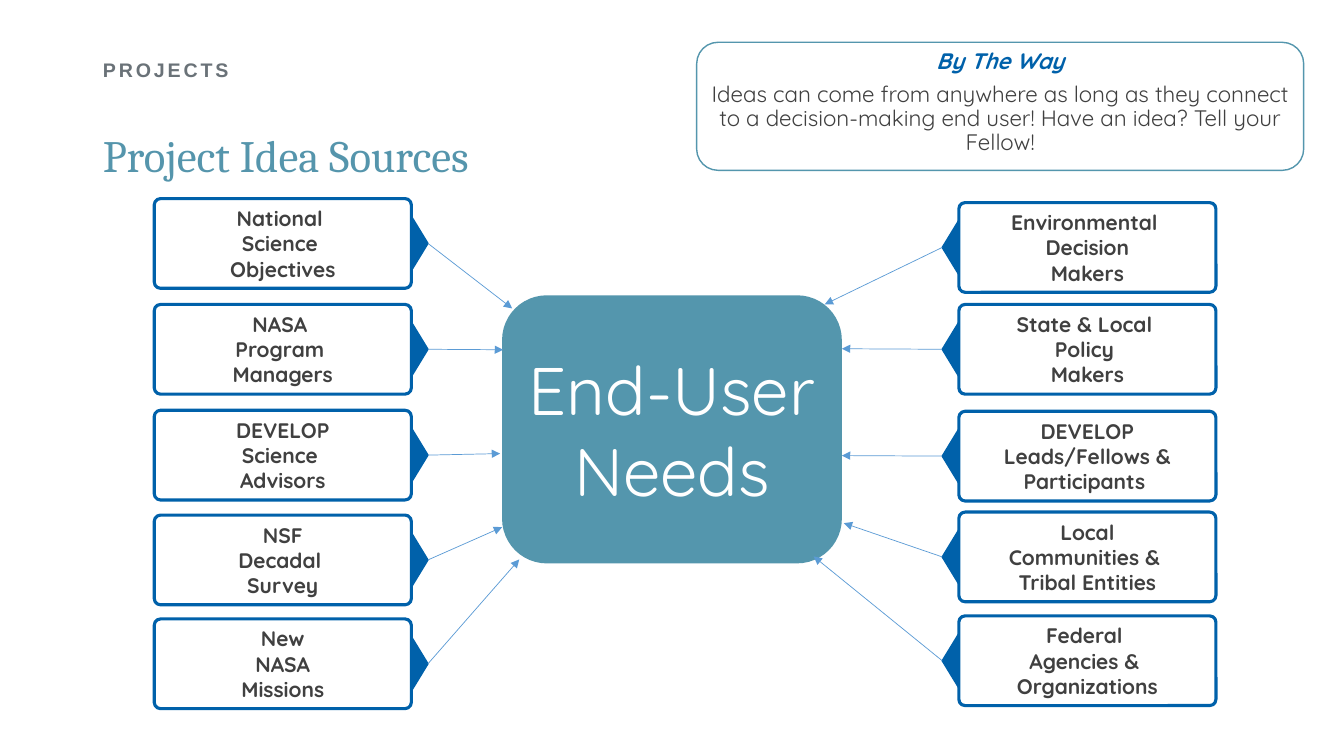
"""Build the slide on project idea sources that feed end-user needs."""
from lxml import etree
from pptx import Presentation
from pptx.dml.color import RGBColor
from pptx.enum.shapes import MSO_CONNECTOR, MSO_SHAPE
from pptx.enum.text import MSO_ANCHOR, MSO_AUTO_SIZE, PP_ALIGN
from pptx.oxml.ns import qn
from pptx.util import Inches, Pt

ROUNDED, TRIANGLE = MSO_SHAPE.ROUNDED_RECTANGLE, MSO_SHAPE.ISOSCELES_TRIANGLE
STRAIGHT = MSO_CONNECTOR.STRAIGHT
TOP, MIDDLE = MSO_ANCHOR.TOP, MSO_ANCHOR.MIDDLE
LEFT, CENTER = PP_ALIGN.LEFT, PP_ALIGN.CENTER
NO_FIT = MSO_AUTO_SIZE.NONE

TEAL, BLUE, ARROW_BLUE = "5496AD", "0061AA", "5B9BD5"
DARK, GRAY, WHITE = "404040", "6A7278", "FFFFFF"
FONT = "Quicksand"

SECTION = "PROJECTS"
HEADING = "Project Idea Sources"
HUB = "End-User Needs"
ASIDE_TITLE = "By The Way"
ASIDE = ("Ideas can come from anywhere as long as they connect to a "
         "decision-making end user! Have an idea? Tell your Fellow!")

# Each source: lines of its label, top of its box, point where its arrow ends.
LEFT_SOURCES = [
    (["National ", "Science ", "Objectives"], 1.97, (5.08, 3.06)),
    (["NASA ", "Program ", "Managers"], 3.02, (4.99, 3.47)),
    (["DEVELOP", "Science ", "Advisors"], 4.07, (4.96, 4.5)),
    (["NSF", "Decadal ", "Survey"], 5.11, (4.98, 5.23)),
    (["New", "NASA", "Missions"], 6.14, (5.15, 5.55)),
]
RIGHT_SOURCES = [
    (["Environmental ", "Decision", "Makers"], 2.01, (8.18, 3.02)),
    (["State & Local ", "Policy ", "Makers"], 3.02, (8.35, 3.46)),
    (["DEVELOP", "Leads/Fellows & Participants "], 4.08, (8.35, 4.52)),
    (["Local", "Communities & ", "Tribal Entities"], 5.08, (8.37, 5.19)),
    (["Federal ", "Agencies & ", "Organizations"], 6.11, (8.07, 5.52)),
]
COLUMNS = [(LEFT_SOURCES, 1.53, 4.12, 90), (RIGHT_SOURCES, 9.51, 9.47, 270)]
BOX_W, BOX_H = 2.55, 0.89
POINTER_W, POINTER_H = 0.82, 0.25


def rgb(color):
    return RGBColor.from_string(color)


def write(shape, lines, size, color, font=FONT, bold=False, align=CENTER,
          anchor=MIDDLE):
    frame = shape.text_frame
    frame.word_wrap = True
    frame.auto_size = NO_FIT
    frame.vertical_anchor = anchor
    frame.text = "\n".join(lines)
    for line in frame.paragraphs:
        line.alignment = align
        line.font.size = Pt(size)
        line.font.name = font
        line.font.bold = bold
        line.font.color.rgb = rgb(color)
    return frame.paragraphs


def add_shape(slide, kind, place, fill=None, line=None, width=1):
    shape = slide.shapes.add_shape(kind, *map(Inches, place))
    shape.shadow.inherit = False
    if fill:
        shape.fill.solid()
        shape.fill.fore_color.rgb = rgb(fill)
    else:
        shape.fill.background()
    if line:
        shape.line.color.rgb = rgb(line)
        shape.line.width = Pt(width)
    else:
        shape.line.fill.background()
    return shape


def add_arrow(slide, start, end):
    arrow = slide.shapes.add_connector(STRAIGHT, *map(Inches, start + end))
    arrow.line.color.rgb = rgb(ARROW_BLUE)
    arrow.line.width = Pt(0.5)
    etree.SubElement(arrow.line._get_or_add_ln(), qn("a:tailEnd"), type="triangle")
    etree.SubElement(arrow._element.spPr, qn("a:effectLst"))


def move(shape, place):
    shape.left, shape.top, shape.width, shape.height = map(Inches, place)


def add_headings(slide):
    section, heading = slide.shapes.title, slide.placeholders[1]
    move(section, (0.92, 0.4, 11.5, 0.62))
    label = write(section, [SECTION], 14, GRAY, "Arial", True, LEFT)[0]
    label.line_spacing = 0.9
    label.runs[0].font._element.set("spc", "200")
    move(heading, (0.92, 1.08, 11.71, 0.9))
    title = write(heading, [HEADING], 32, "5595AC", "Cambria", align=LEFT)[0]
    title.space_before = Pt(10)
    properties = title._p.get_or_add_pPr()
    properties.set("marL", "0")
    properties.set("indent", "0")
    etree.SubElement(properties, qn("a:buNone"))
    properties.append(properties.find(qn("a:defRPr")))


def add_aside(slide):
    aside = add_shape(slide, ROUNDED, (6.91, 0.42, 6.02, 1.27), line=TEAL)
    frame = aside.text_frame
    frame.margin_left = frame.margin_right = Inches(0.04)
    frame.margin_top = Inches(0.02)
    lead, body = write(aside, [ASIDE_TITLE, ASIDE], 16, DARK, anchor=TOP)
    lead.line_spacing = body.line_spacing = 0.9
    lead.space_after = Pt(6)
    lead.font.bold = lead.font.italic = True
    lead.font.color.rgb = rgb(BLUE)


def add_source(slide, lines, top, target, box_left, tip_base, rotation):
    middle = top + BOX_H / 2
    pointer = add_shape(slide, TRIANGLE, (tip_base - POINTER_W / 2,
                        middle - POINTER_H / 2, POINTER_W, POINTER_H), BLUE, BLUE)
    pointer.rotation = rotation
    box = add_shape(slide, ROUNDED, (box_left, top, BOX_W, BOX_H), WHITE, BLUE, 2.25)
    box.adjustments[0] = 0.07
    write(box, lines, 15, DARK, bold=True)
    toward_hub = 1 if rotation == 90 else -1
    add_arrow(slide, (tip_base + toward_hub * POINTER_H / 2, middle), target)


def main():
    deck = Presentation()
    deck.slide_width, deck.slide_height = Inches(13.33), Inches(7.5)
    slide = deck.slides.add_slide(deck.slide_layouts[1])
    add_headings(slide)
    hub = add_shape(slide, ROUNDED, (4.98, 2.93, 3.37, 2.66), TEAL)
    write(hub, [HUB], 48, WHITE)
    add_aside(slide)
    for sources, box_left, tip_base, rotation in COLUMNS:
        for lines, top, target in sources:
            add_source(slide, lines, top, target, box_left, tip_base, rotation)
    deck.save("out.pptx")


if __name__ == "__main__":
    main()
